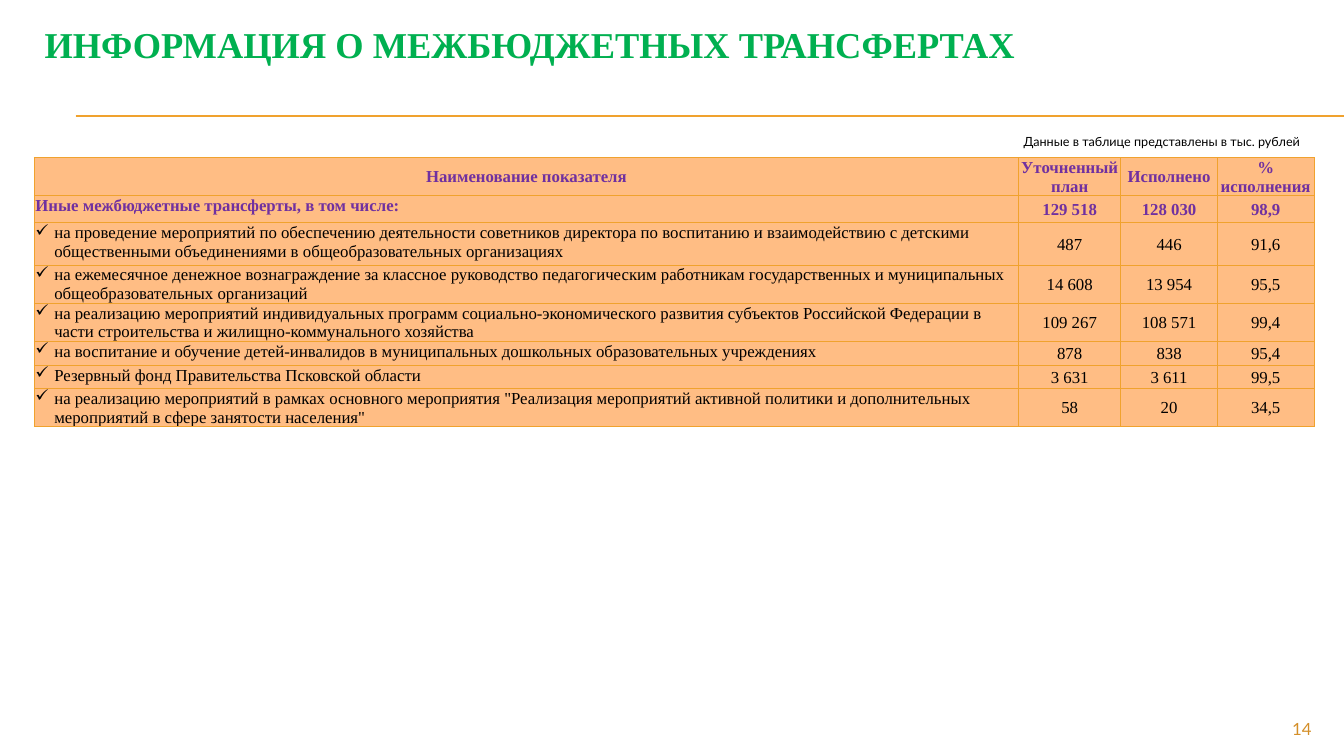
from lxml.etree import SubElement
from pptx import Presentation
from pptx.dml.color import RGBColor
from pptx.enum.shapes import MSO_CONNECTOR
from pptx.enum.text import MSO_ANCHOR, MSO_AUTO_SIZE, PP_ALIGN
from pptx.oxml.ns import qn
from pptx.util import Pt

COLORS = {
    "title": "00B050",
    "heading": "7030A0",
    "text": "000000",
    "cell": "FFBD84",
    "rule": "F0A22E",
    "page": "D48F29",
}
SERIF, SANS = "Times New Roman", "Lato"

COLUMN_WIDTHS = [703, 73, 69, 69]
ROW_HEIGHTS = [27, 19.3, 30.2, 27, 27, 17, 16.5, 27]
TRANSFERS = [
    ("Наименование показателя", "Уточненный план", "Исполнено", "% исполнения"),
    ("Иные межбюджетные трансферты, в том числе:", "129 518", "128 030", "98,9"),
    ("на проведение мероприятий по обеспечению деятельности советников директора "
     "по воспитанию и взаимодействию с детскими общественными объединениями "
     "в общеобразовательных организациях", "487", "446", "91,6"),
    ("на ежемесячное денежное вознаграждение за классное руководство педагогическим "
     "работникам государственных и муниципальных общеобразовательных организаций",
     "14 608", "13 954", "95,5"),
    ("на реализацию мероприятий индивидуальных программ социально-экономического "
     "развития субъектов Российской Федерации в части строительства и "
     "жилищно-коммунального хозяйства", "109 267", "108 571", "99,4"),
    ("на воспитание и обучение детей-инвалидов в муниципальных дошкольных "
     "образовательных учреждениях", "878", "838", "95,4"),
    ("Резервный фонд Правительства Псковской области", "3 631", "3 611", "99,5"),
    ("на реализацию мероприятий в рамках основного мероприятия \"Реализация "
     "мероприятий активной политики и дополнительных мероприятий в сфере "
     "занятости населения\"", "58", "20", "34,5"),
]


class TransferSlide:
    """Holds the slide and draws its elements in one style."""

    def __init__(self, deck):
        self.slide = deck.slides.add_slide(deck.slide_layouts[5])

    def set_text(self, frame, text, size, font, color, bold=False, align=PP_ALIGN.LEFT):
        paragraph = frame.paragraphs[0]
        paragraph.text = text
        paragraph.alignment = align
        paragraph.font.size = Pt(size)
        paragraph.font.name = font
        paragraph.font.bold = bold
        paragraph.font.color.rgb = RGBColor.from_string(COLORS[color])
        return paragraph

    def title(self, text, left, top, width, height):
        heading = self.slide.shapes.title
        heading.left, heading.top = Pt(left), Pt(top)
        heading.width, heading.height = Pt(width), Pt(height)
        frame = heading.text_frame
        frame.auto_size = MSO_AUTO_SIZE.NONE
        frame.vertical_anchor = MSO_ANCHOR.MIDDLE
        self.set_text(frame, text, 26, SERIF, "title", bold=True)

    def rule(self, left, right, y):
        line = self.slide.shapes.add_connector(
            MSO_CONNECTOR.STRAIGHT, Pt(left), Pt(y), Pt(right), Pt(y))
        line.line.color.rgb = RGBColor.from_string(COLORS["rule"])
        line.line.width = Pt(0.75)
        SubElement(line._element.spPr, qn("a:effectLst"))

    def label(self, text, left, top, width, height, size, color, align, wrap=True):
        box = self.slide.shapes.add_textbox(Pt(left), Pt(top), Pt(width), Pt(height))
        box.text_frame.word_wrap = wrap
        self.set_text(box.text_frame, text, size, SANS, color, align=align)

    def table(self, rows, left, top):
        grid = self.slide.shapes.add_table(
            len(rows), len(COLUMN_WIDTHS), Pt(left), Pt(top),
            Pt(sum(COLUMN_WIDTHS)), Pt(sum(ROW_HEIGHTS))).table
        grid.first_row = grid.horz_banding = False
        for column, width in zip(grid.columns, COLUMN_WIDTHS):
            column.width = Pt(width)
        for row, height in zip(grid.rows, ROW_HEIGHTS):
            row.height = Pt(height)
        for r, values in enumerate(rows):
            for c, value in enumerate(values):
                self.cell(grid.cell(r, c), value, heading=r < 2,
                          centred=r == 0 or c > 0)

    def cell(self, cell, text, heading, centred):
        cell.margin_left = cell.margin_right = cell.margin_top = Pt(0.7)
        cell.margin_bottom = Pt(0)
        cell.vertical_anchor = MSO_ANCHOR.MIDDLE if centred else MSO_ANCHOR.TOP
        paragraph = self.set_text(
            cell.text_frame, text, 12, SERIF, "heading" if heading else "text",
            bold=heading, align=PP_ALIGN.CENTER if centred else PP_ALIGN.LEFT)
        if not heading and not centred:
            self.check_mark(paragraph)
        self.borders(cell)
        cell.fill.solid()
        cell.fill.fore_color.rgb = RGBColor.from_string(COLORS["cell"])

    def check_mark(self, paragraph):
        properties = paragraph._p.get_or_add_pPr()
        properties.set("marL", str(Pt(13.5)))
        properties.set("indent", str(Pt(-13.5)))
        bullet = SubElement(properties, qn("a:buChar"), char="✓")
        properties.insert(0, bullet)

    def borders(self, cell):
        properties = cell._tc.get_or_add_tcPr()
        for side in ("lnL", "lnR", "lnT", "lnB"):
            border = SubElement(properties, qn(f"a:{side}"), w=str(Pt(0.79)))
            fill = SubElement(border, qn("a:solidFill"))
            SubElement(fill, qn("a:srgbClr"), val=COLORS["rule"])


def main():
    deck = Presentation()
    deck.slide_width, deck.slide_height = Pt(960), Pt(540)
    page = TransferSlide(deck)
    for y in (82.8, 83.5):
        page.rule(54, 960, y)
    page.table(TRANSFERS, 24.6, 112.5)
    page.label("14", 864, 509.8, 80, 19.4, 12, "page", PP_ALIGN.RIGHT)
    page.title("ИНФОРМАЦИЯ О МЕЖБЮДЖЕТНЫХ ТРАНСФЕРТАХ", 24.6, 18, 914, 26.6)
    page.label("Данные в таблице представлены в тыс. рублей",
               724, 92.2, 214.6, 18, 9, "text", PP_ALIGN.LEFT, wrap=False)
    deck.save("out.pptx")


if __name__ == "__main__":
    main()
